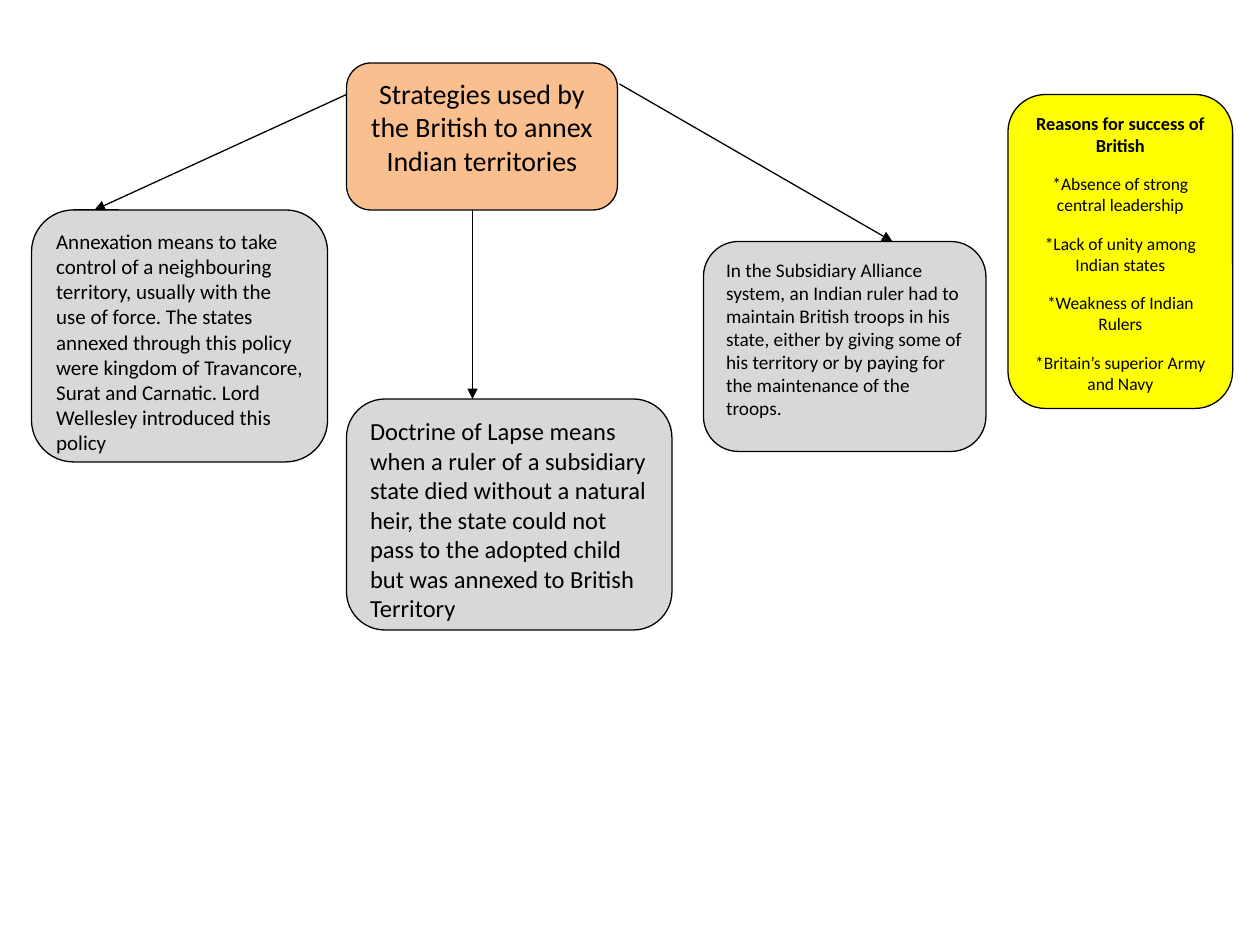
from lxml import etree
from pptx import Presentation
from pptx import util as u
from pptx.dml.color import RGBColor
from pptx.enum import shapes, text
from pptx.oxml import ns

BLACK = RGBColor(0x00, 0x00, 0x00)
GREY = RGBColor(0xD8, 0xD8, 0xD8)
ORANGE = RGBColor(0xFA, 0xBF, 0x8F)
YELLOW = RGBColor(0xFF, 0xFF, 0x00)

COLUMNS, ROWS = 120, 90
SLIDE_WIDTH, SLIDE_HEIGHT = u.Inches(10), u.Inches(7.5)
LINE_WIDTH = u.Pt(0.75)
LEFT, CENTER = text.PP_ALIGN.LEFT, text.PP_ALIGN.CENTER

SUBSIDIARY_ALLIANCE = (
    "In the Subsidiary Alliance system, an Indian ruler had to maintain British troops in his state, "
    "either by giving some of his territory or by paying for the maintenance of the troops."
)
ANNEXATION = (
    "Annexation means to take control of a neighbouring territory, usually with the use of force. "
    "The states annexed through this policy were kingdom of Travancore, Surat and Carnatic. "
    "Lord Wellesley introduced this policy"
)
DOCTRINE_OF_LAPSE = (
    "Doctrine of Lapse means when a ruler of a subsidiary state died without a natural heir, "
    "the state could not pass to the adopted child but was annexed to British Territory"
)
TITLE = "Strategies used by the British to annex Indian territories"
REASONS_HEADING = "Reasons for success of British"
REASONS = [
    "*Absence of strong central leadership",
    "*Lack of unity among Indian states",
    "*Weakness of Indian Rulers",
    "*Britain’s superior Army and Navy",
]


def to_lengths(*cells):
    """Turn alternating column and row counts into slide lengths."""
    units = (SLIDE_WIDTH / COLUMNS, SLIDE_HEIGHT / ROWS)
    return [u.Emu(round(cell * units[index % 2])) for index, cell in enumerate(cells)]


def apply_format(target, values):
    """Set every attribute of the target from a dict of values."""
    for name, value in values.items():
        setattr(target, name, value)


def style_line(line):
    """Give a line the common colour and width."""
    line.color.rgb = BLACK
    line.width = LINE_WIDTH


def add_box(slide, cells, fill, alignment, lines):
    """Add a rounded box with one paragraph per (wording, size, bold) line."""
    shape = slide.shapes.add_shape(shapes.MSO_SHAPE.ROUNDED_RECTANGLE, *to_lengths(*cells))
    shape.shadow.inherit = False
    shape.fill.solid()
    shape.fill.fore_color.rgb = fill
    style_line(shape.line)
    frame = shape.text_frame
    apply_format(frame, {"word_wrap": True, "vertical_anchor": text.MSO_ANCHOR.TOP})
    for index, (wording, size, bold) in enumerate(lines):
        paragraph = frame.add_paragraph() if index else frame.paragraphs[0]
        apply_format(paragraph, {"alignment": alignment, "space_after": u.Pt(10)})
        run = paragraph.add_run()
        run.text = wording
        apply_format(run.font, {"name": "Calibri", "size": u.Pt(size), "bold": bold})
        run.font.color.rgb = BLACK


def add_arrow(slide, cells):
    """Add a straight arrow from the first grid point to the second."""
    connector = slide.shapes.add_connector(shapes.MSO_CONNECTOR.STRAIGHT, *to_lengths(*cells))
    style_line(connector.line)
    properties = connector.element.spPr
    etree.SubElement(properties.find(ns.qn("a:ln")), ns.qn("a:tailEnd"), type="triangle")
    etree.SubElement(properties, ns.qn("a:effectLst"))


def main():
    """Build the strategy map and save it."""
    presentation = Presentation()
    apply_format(presentation, {"slide_width": SLIDE_WIDTH, "slide_height": SLIDE_HEIGHT})
    slide = presentation.slides.add_slide(presentation.slide_layouts[6])

    add_box(slide, (67, 23, 26.9, 20), GREY, LEFT, [(SUBSIDIARY_ALLIANCE, 11, False)])
    add_box(slide, (3, 20, 28.2, 24), GREY, LEFT, [(ANNEXATION, 12, False)])
    add_box(slide, (33, 38, 31, 22), GREY, LEFT, [(DOCTRINE_OF_LAPSE, 14, False)])
    add_arrow(slide, (45, 20, 45, 38))
    add_arrow(slide, (59, 8, 85, 23))
    add_box(slide, (33, 6, 25.8, 14), ORANGE, CENTER, [(TITLE, 16, False)])
    reasons = [(REASONS_HEADING, 10.5, True)] + [(reason, 10, False) for reason in REASONS]
    add_box(slide, (96, 9, 21.4, 29.9), YELLOW, CENTER, reasons)
    add_arrow(slide, (33, 9, 9, 20))

    presentation.save("out.pptx")


if __name__ == "__main__":
    main()
